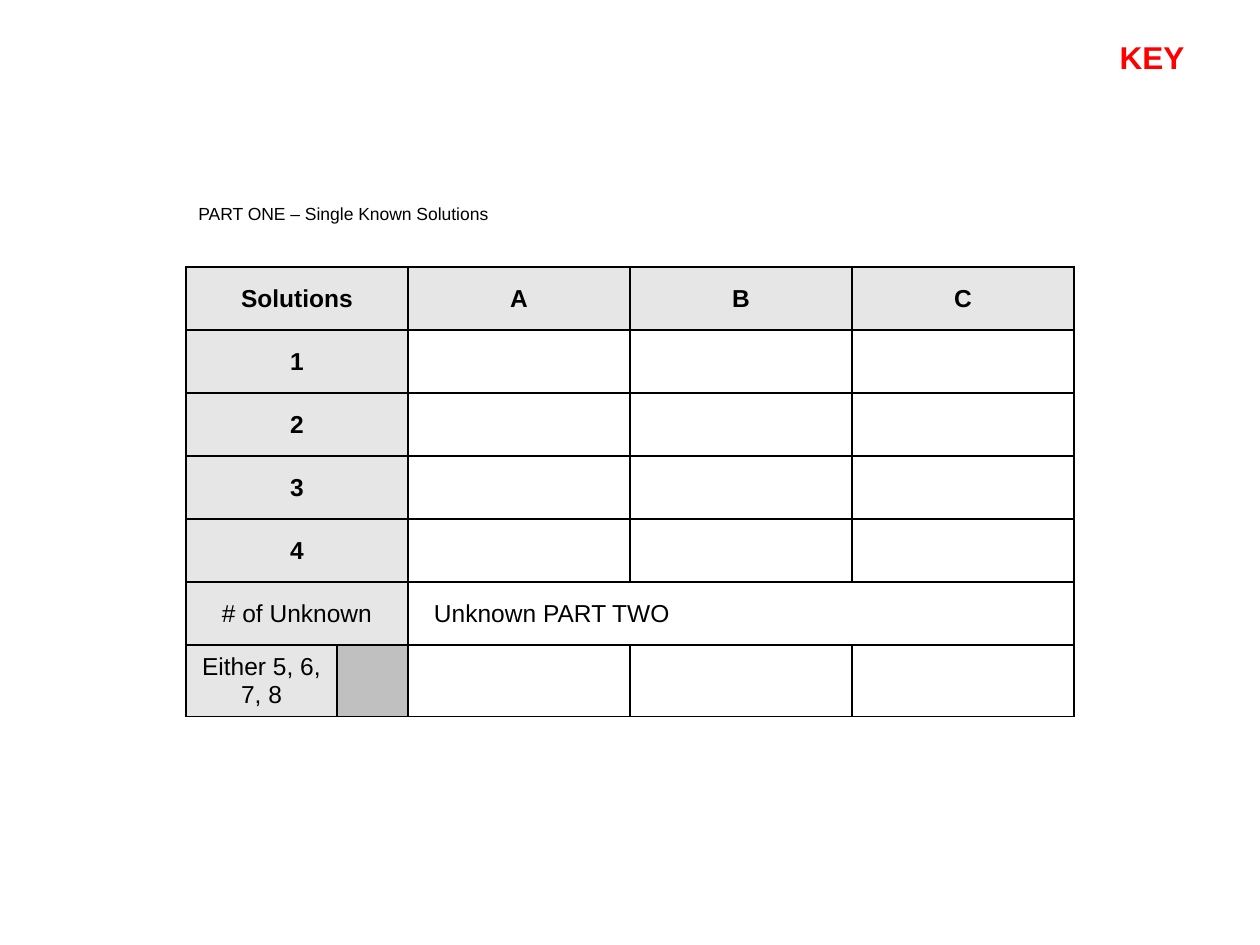
import pptx
import pptx.util
import pptx.dml.color
import pptx.enum.text
import pptx.oxml
import pptx.oxml.ns

SCALE = 914400 / 126
HUES = {"ink": "000000", "key": "FF0000", "head": "E6E6E6", "dark": "C0C0C0"}
ALIGN = pptx.enum.text.PP_ALIGN
MID = pptx.enum.text.MSO_ANCHOR.MIDDLE
COLS = [151, 71, 222, 222, 222]
ROW = 63
LABELS = ["Solutions", "1", "2", "3", "4", "# of Unknown", "Either 5, 6, 7, 8"]


def px(num):
    return pptx.util.Emu(round(num * SCALE))


def tint(name):
    return pptx.dml.color.RGBColor.from_string(HUES[name])


def apply(item, form):
    for key, val in form.items():
        setattr(item, key, val)


def write(frame, text, size, hue="ink", bold=False, align=ALIGN.LEFT):
    para = frame.paragraphs[0]
    para.alignment = align
    run = para.add_run()
    run.text = text
    apply(run.font, {"name": "Arial", "size": pptx.util.Pt(size), "bold": bold})
    run.font.color.rgb = tint(hue)


def label(slide, box, text, size, top=6, **form):
    frame = slide.shapes.add_textbox(*map(px, box)).text_frame
    apply(frame, {"word_wrap": False, "margin_top": px(top)})
    write(frame, text, size, **form)


def paint(cell, hue):
    cell.fill.solid()
    cell.fill.fore_color.rgb = tint(hue)


def border(cell):
    space = pptx.oxml.ns.nsdecls("a")
    props = cell._tc.get_or_add_tcPr()
    for spot, side in enumerate("LRTB"):
        props.insert(spot, pptx.oxml.parse_xml(
            f'<a:ln{side} {space} w="12700"><a:solidFill>'
            f'<a:srgbClr val="{HUES["ink"]}"/></a:solidFill></a:ln{side}>'))


def grid(slide, box):
    table = slide.shapes.add_table(len(LABELS), len(COLS), *map(px, box)).table
    apply(table, {"first_row": False, "horz_banding": False})
    for col, wide in zip(table.columns, COLS):
        col.width = px(wide)
    for row in table.rows:
        row.height = px(ROW)
    for cell in table.iter_cells():
        cell.vertical_anchor = MID
        cell.fill.background()
        border(cell)
    for num, text in enumerate(LABELS):
        cell = table.cell(num, 0)
        paint(cell, "head")
        write(cell.text_frame, text, 14, bold=num < 5, align=ALIGN.CENTER)
        if num < len(LABELS) - 1:
            cell.merge(table.cell(num, 1))
    for num, text in enumerate("ABC", 2):
        cell = table.cell(0, num)
        paint(cell, "head")
        write(cell.text_frame, text, 14, bold=True, align=ALIGN.CENTER)
    wide = table.cell(5, 2)
    wide.merge(table.cell(5, 4))
    wide.margin_left = px(26)
    write(wide.text_frame, "Unknown PART TWO", 14)
    paint(table.cell(6, 1), "dark")


def main():
    deck = pptx.Presentation()
    apply(deck, {"slide_width": px(1260), "slide_height": px(945)})
    slide = deck.slides.add_slide(deck.slide_layouts[6])
    label(slide, (186, 195, 316, 72), "PART ONE – Single Known Solutions", 10, top=8)
    grid(slide, (186, 267, sum(COLS), ROW * len(LABELS)))
    label(slide, (1107, 32, 90, 50), "KEY", 18, hue="key", bold=True, align=ALIGN.CENTER)
    deck.save("out.pptx")


if __name__ == "__main__":
    main()
